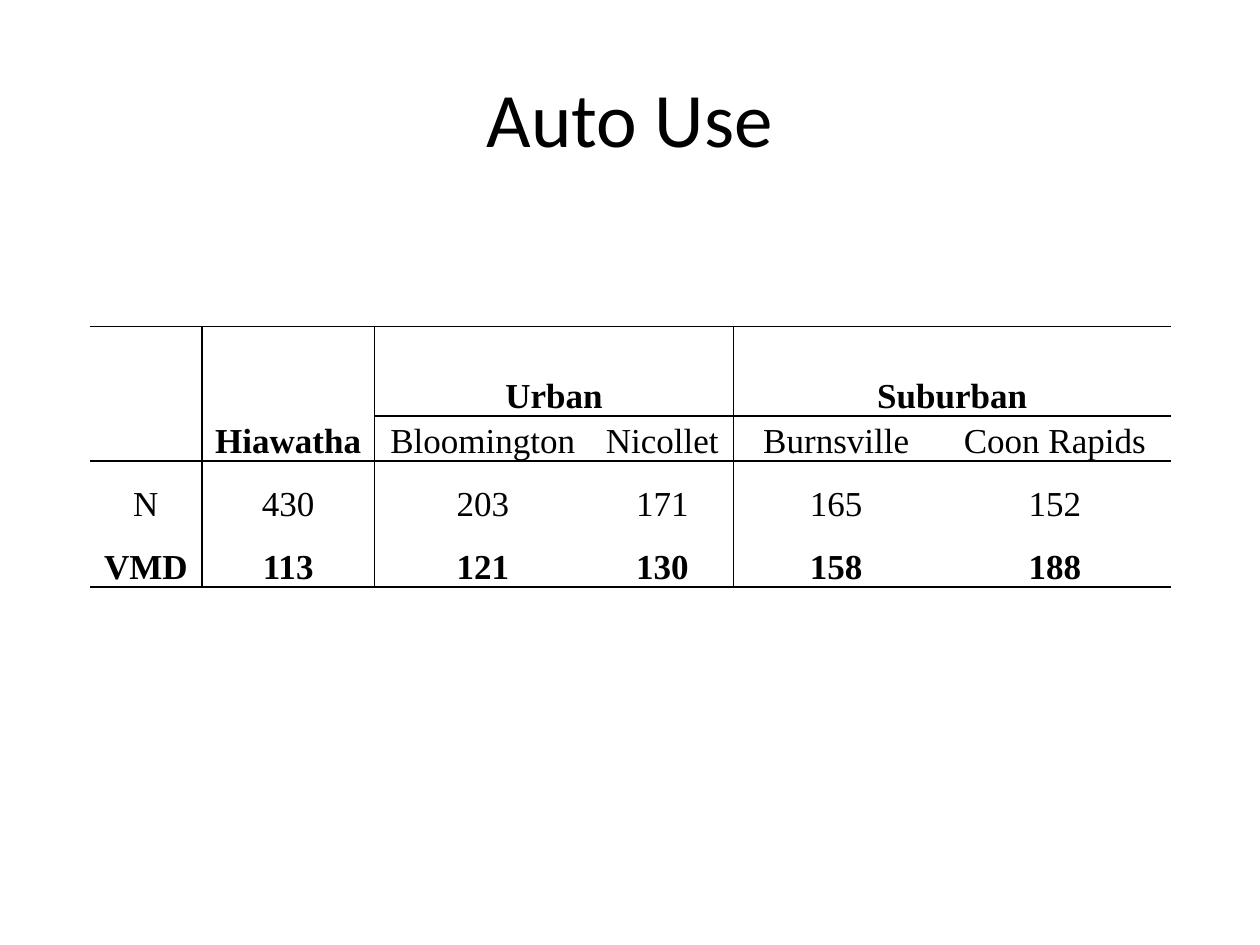
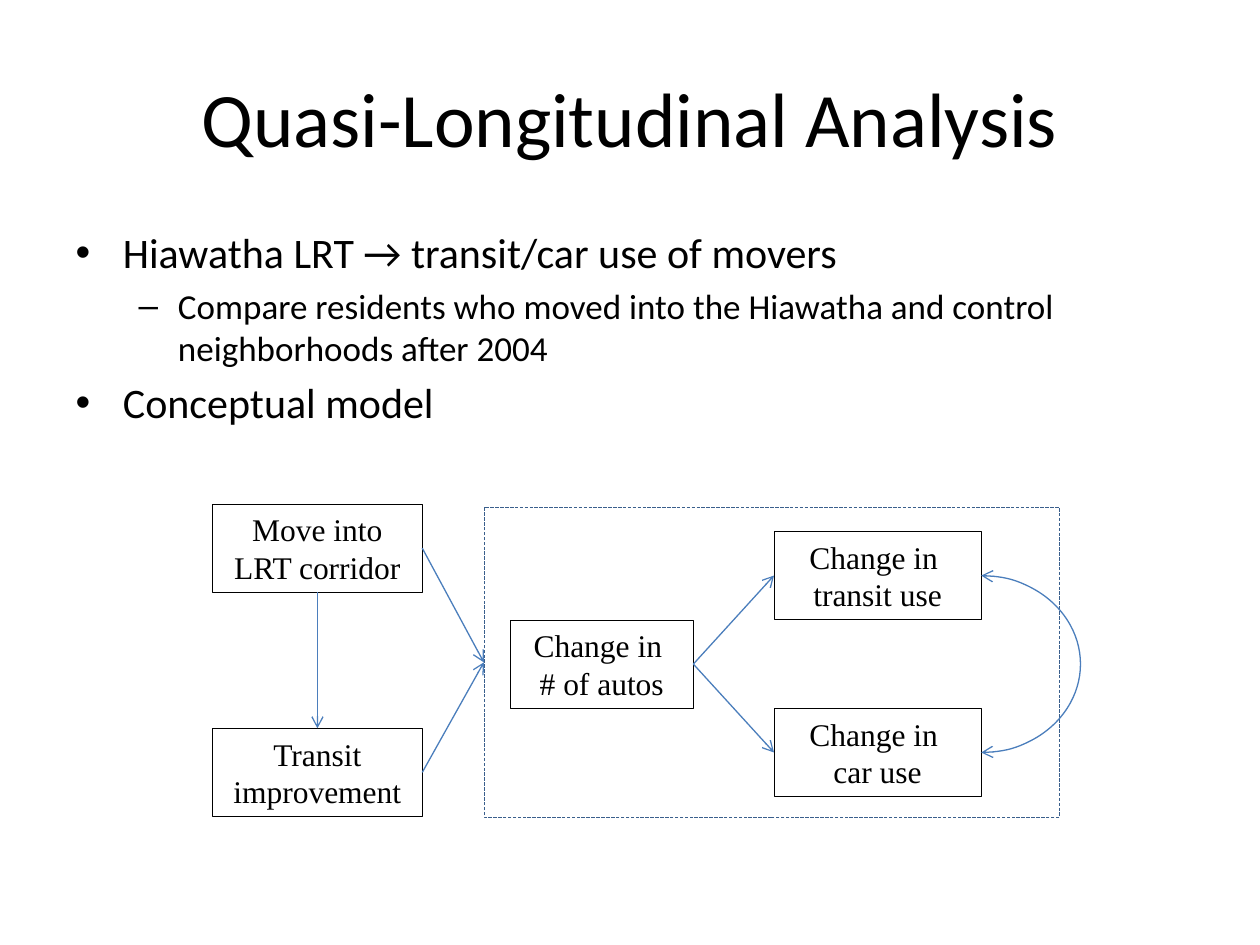
import lxml.etree
import pptx
import pptx.dml.color
import pptx.enum.dml
import pptx.enum.shapes
import pptx.enum.text
import pptx.oxml.ns
import pptx.util

Pt = pptx.util.Pt
qn = pptx.oxml.ns.qn
ALIGN = pptx.enum.text.PP_ALIGN
ANCHOR = pptx.enum.text.MSO_ANCHOR
SHAPE = pptx.enum.shapes.MSO_SHAPE

COLORS = {"text": "000000", "box": "FFFFFF", "arrow": "4B7EBC", "frame": "3A5F8C"}
HEAD_FONT, SERIF = "Calibri", "Times New Roman"
NO_STYLE_TABLE = "{2D5ABB26-0587-4C30-8999-92F81FD0307C}"
TOP, LEFT, BOTTOM, RIGHT = range(4)  # connection sites of a rectangle
DEGREE = 0.6  # one degree in the units of shape.adjustments


def rgb(name):
    return pptx.dml.color.RGBColor.from_string(COLORS[name])


class Deck:
    """Holds the presentation, its style and the current slide."""

    def __init__(self):
        self.prs = pptx.Presentation()
        self.prs.slide_width, self.prs.slide_height = Pt(720), Pt(540)
        self.s = None

    def font(self, p, size, name=HEAD_FONT, bold=False):
        p.font.size, p.font.name, p.font.bold = Pt(size), name, bold
        p.font.color.rgb = rgb("text")

    def place(self, sp, x, y, w, h):
        sp.left, sp.top, sp.width, sp.height = Pt(x), Pt(y), Pt(w), Pt(h)

    def slide(self, title, layout):
        self.s = self.prs.slides.add_slide(self.prs.slide_layouts.get_by_name(layout))
        sp = self.s.shapes.title
        self.place(sp, 36, 21.6, 648, 90)
        sp.text_frame.text = title
        sp.text_frame.vertical_anchor = ANCHOR.MIDDLE
        p = sp.text_frame.paragraphs[0]
        p.alignment = ALIGN.CENTER
        self.font(p, 44)

    def body(self, items):
        """Fill the body placeholder with (level, text) items."""
        sp = self.s.placeholders[1]
        self.place(sp, 36, 126, 648, 356.4)
        tf = sp.text_frame
        for i, (level, text) in enumerate(items):
            p = tf.add_paragraph() if i else tf.paragraphs[0]
            p.text, p.level = text, level
            self.font(p, 20 if level else 24)

    def line(self, sp, color, width):
        sp.line.color.rgb, sp.line.width = rgb(color), Pt(width)

    def arrowheads(self, sp, *ends):
        ln = sp.line._get_or_add_ln()
        for end in ends:
            lxml.etree.SubElement(ln, qn(f"a:{end}"), type="arrow")

    def shape(self, kind, x, y, w, h, color, width):
        sp = self.s.shapes.add_shape(kind, Pt(x), Pt(y), Pt(w), Pt(h))
        sp.shadow.inherit = False
        sp.fill.background()
        self.line(sp, color, width)
        return sp

    def box(self, text, x, y, w):
        sp = self.shape(SHAPE.RECTANGLE, x, y, w, 50.4, "text", 0.5)
        sp.fill.solid()
        sp.fill.fore_color.rgb = rgb("box")
        tf = sp.text_frame
        tf.word_wrap, tf.vertical_anchor = True, ANCHOR.TOP
        tf.text = text
        for p in tf.paragraphs:
            p.alignment = ALIGN.CENTER
            self.font(p, 18, SERIF)
        return sp

    def arrow(self, start, start_site, end, end_site):
        cn = self.s.shapes.add_connector(
            pptx.enum.shapes.MSO_CONNECTOR.STRAIGHT, 0, 0, 0, 0)
        cn.begin_connect(start, start_site)
        cn.end_connect(end, end_site)
        self.line(cn, "arrow", 0.75)
        self.arrowheads(cn, "tailEnd")
        lxml.etree.SubElement(cn._element.spPr, qn("a:effectLst"))

    def table(self, x, y, widths, heights):
        """Add an unstyled table with the given column widths and row heights."""
        frame = self.s.shapes.add_table(len(heights), len(widths), Pt(x), Pt(y),
                                        Pt(sum(widths)), Pt(sum(heights)))
        tbl = frame.table
        tbl.first_row = tbl.horz_banding = False
        tbl._tbl.tblPr.find(qn("a:tableStyleId")).text = NO_STYLE_TABLE
        for column, width in zip(tbl.columns, widths):
            column.width = Pt(width)
        for row, height in zip(tbl.rows, heights):
            row.height = Pt(height)
        return tbl

    def cell(self, cell, text, bold, sides):
        """Write a cell and rule the sides named among L, R, T and B."""
        cell.margin_left = cell.margin_right = Pt(5)
        cell.margin_top = cell.margin_bottom = 0
        cell.vertical_anchor = ANCHOR.BOTTOM
        cell.fill.background()
        if text:
            cell.text = text
        p = cell.text_frame.paragraphs[0]
        p.alignment, p.line_spacing = ALIGN.CENTER, 1.15
        self.font(p, 20, SERIF, bold)
        tcPr = cell._tc.get_or_add_tcPr()
        for i, side in enumerate("LRTB"):
            ln = lxml.etree.Element(qn(f"a:ln{side}"), w=str(Pt(1)))
            if side in sides:
                fill = lxml.etree.SubElement(ln, qn("a:solidFill"))
                lxml.etree.SubElement(fill, qn("a:srgbClr"), val=COLORS["text"])
            else:
                lxml.etree.SubElement(ln, qn("a:noFill"))
            tcPr.insert(i, ln)


def auto_use(deck):
    deck.slide("Auto Use", "Title Only")
    rows = [
        ["", "", "Urban", "", "Suburban", ""],
        ["", "Hiawatha", "Bloomington", "Nicollet", "Burnsville", "Coon Rapids"],
        ["N", "430", "203", "171", "165", "152"],
        ["VMD", "113", "121", "130", "158", "188"],
    ]
    tbl = deck.table(51.3, 186.7, [64.1, 98.6, 123.8, 81.4, 117.4, 132.5],
                     [51, 25.7, 36, 36])
    group_starts = (1, 2, 4)
    for r, row in enumerate(rows):
        for c, text in enumerate(row):
            rules = {
                "L": c in group_starts,
                "R": c + 1 in group_starts,
                "T": r in (0, 2) or (r == 1 and c >= 2),
                "B": r in (1, 3) or (r == 0 and c >= 2),
            }
            bold = r in (0, 3) or text == "Hiawatha"
            deck.cell(tbl.cell(r, c), text, bold, [k for k, on in rules.items() if on])
    for c in (2, 4):
        tbl.cell(0, c).merge(tbl.cell(0, c + 1))


def quasi_longitudinal(deck):
    deck.slide("Quasi-Longitudinal Analysis", "Title and Content")
    deck.body([
        (0, "Hiawatha LRT → transit/car use of movers"),
        (1, "Compare residents who moved into the Hiawatha and control "
            "neighborhoods after 2004"),
        (0, "Conceptual model"),
    ])
    frame = deck.shape(SHAPE.RECTANGLE, 276.5, 290, 329, 177, "frame", 0.25)
    frame.line.dash_style = pptx.enum.dml.MSO_LINE.LONG_DASH
    transit = deck.box("Change in \vtransit use", 442.3, 303.7, 118.4)
    car = deck.box("Change in \vcar use", 442.3, 404.8, 118.4)
    autos = deck.box("Change in \v# of autos", 291.6, 354.3, 104.6)
    improvement = deck.box("Transit improvement", 121.5, 416.2, 119.8)
    move = deck.box("Move into LRT corridor", 121.5, 288, 119.8)

    deck.arrow(autos, RIGHT, transit, LEFT)
    deck.arrow(autos, RIGHT, car, LEFT)
    deck.arrow(move, BOTTOM, improvement, TOP)
    deck.arrow(improvement, RIGHT, frame, LEFT)
    deck.arrow(move, RIGHT, frame, LEFT)

    bulge = 56.7
    feedback = deck.shape(SHAPE.ARC, 560.7 - bulge, 328.9, 2 * bulge, 101.1,
                          "arrow", 0.75)
    feedback.adjustments[0] = 270 * DEGREE
    feedback.adjustments[1] = 90 * DEGREE
    deck.arrowheads(feedback, "headEnd", "tailEnd")


def main():
    deck = Deck()
    auto_use(deck)
    quasi_longitudinal(deck)
    deck.prs.save("out.pptx")


if __name__ == "__main__":
    main()
